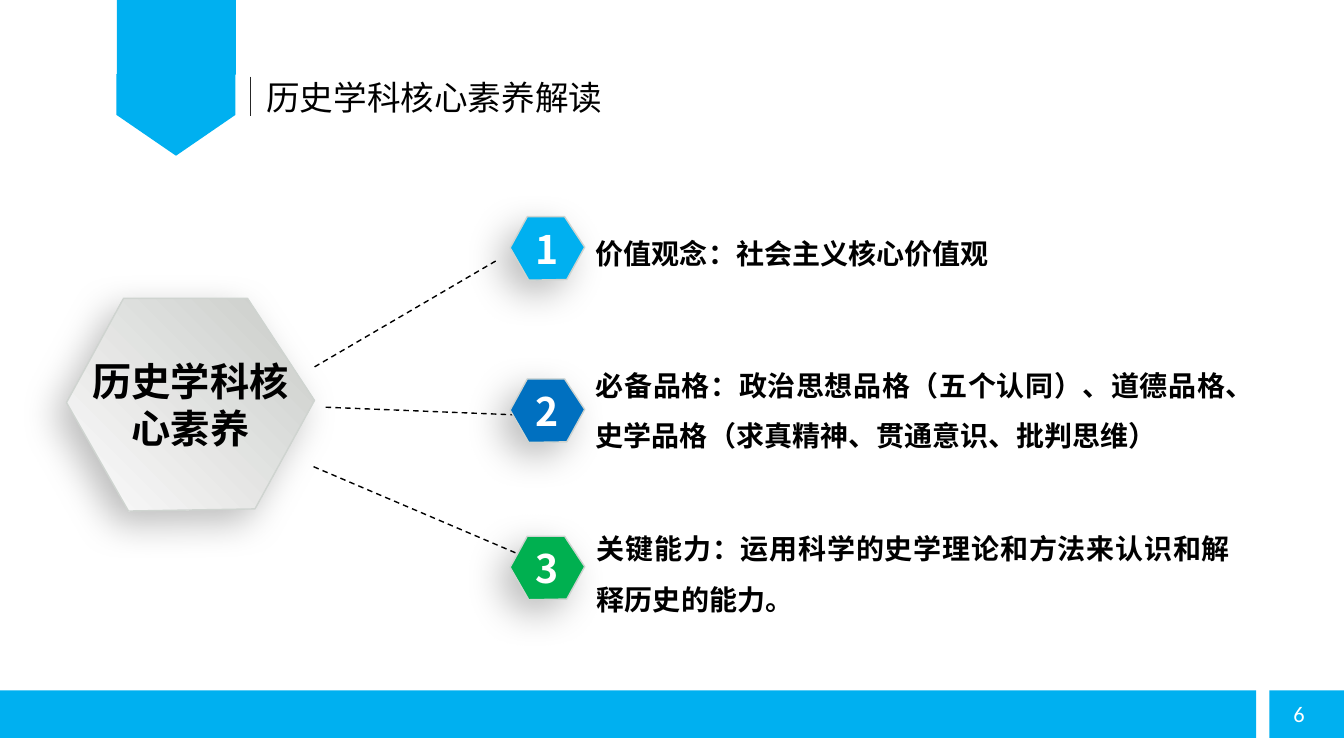
from dataclasses import dataclass

from lxml.etree import SubElement
from pptx import Presentation
from pptx.dml.color import RGBColor
from pptx.enum.dml import MSO_LINE
from pptx.enum.shapes import MSO_CONNECTOR, MSO_SHAPE
from pptx.enum.text import MSO_ANCHOR, PP_ALIGN
from pptx.oxml.ns import qn
from pptx.util import Inches, Pt


@dataclass(frozen=True)
class Theme:
    font: str = "Noto Sans CJK SC"
    number_font: str = "Calibri"
    accent: str = "00B0F0"
    blue: str = "0070C0"
    green: str = "00B050"
    text: str = "000000"
    white: str = "FFFFFF"
    rule: str = "262626"
    outline: str = "CFD4D0"
    gray_dark: str = "C9CBC8"
    gray_light: str = "FCFCFC"
    title_size: int = 24
    hexagon_size: int = 28
    body_size: int = 20
    number_size: int = 16


THEME = Theme()
# Corners of the slightly tilted hexagon, as shares of its box
HEXAGON = [(0.73, 0), (1, 0.48), (0.76, 0.99), (0.25, 1), (0, 0.49), (0.23, 0)]


def color(value):
    return RGBColor.from_string(value)


def write(shape, text, size, fill, bold=False, align=PP_ALIGN.LEFT,
          anchor=MSO_ANCHOR.TOP, spacing=None, font=THEME.font):
    frame = shape.text_frame
    frame.vertical_anchor = anchor
    paragraph = frame.paragraphs[0]
    paragraph.alignment = align
    paragraph.line_spacing = spacing
    run = paragraph.add_run()
    run.text = text
    run.font.size = Pt(size)
    run.font.bold = bold
    run.font.name = font
    run.font.color.rgb = color(fill)
    SubElement(run.font._element, qn("a:ea")).set("typeface", font)


def add_text_box(slide, box, margin=None):
    shape = slide.shapes.add_textbox(*map(Inches, box))
    frame = shape.text_frame
    frame.word_wrap = True
    if margin is not None:
        frame.margin_left = frame.margin_right = Inches(margin)
        frame.margin_top = frame.margin_bottom = Inches(margin)
    return shape


def add_block(slide, kind, box):
    shape = slide.shapes.add_shape(kind, *map(Inches, box))
    shape.shadow.inherit = False
    shape.fill.solid()
    shape.fill.fore_color.rgb = color(THEME.accent)
    shape.line.fill.background()
    return shape


def add_line(slide, start, end, stroke, width, dash=None):
    line = slide.shapes.add_connector(
        MSO_CONNECTOR.STRAIGHT, *map(Inches, start + end))
    line.line.color.rgb = color(stroke)
    line.line.width = Pt(width)
    line.line.dash_style = dash
    SubElement(line._element.spPr, qn("a:effectLst"))


def add_soft_shadow(shape):
    shape.shadow.inherit = False
    effects = shape._element.spPr.find(qn("a:effectLst"))
    shadow = SubElement(effects, qn("a:outerShdw"), blurRad=str(Pt(27)),
                        dist=str(Pt(12)), dir=str(135 * 60000),
                        algn="tr", rotWithShape="0")
    tint = SubElement(shadow, qn("a:srgbClr"), val="000000")
    SubElement(tint, qn("a:alpha"), val="26000")


def add_hexagon(slide, box, text, text_color, fill=None):
    left, top, width, height = box
    corners = [(Inches(left + x * width), Inches(top + y * height))
               for x, y in HEXAGON]
    builder = slide.shapes.build_freeform(*corners[0])
    builder.add_line_segments(corners[1:], close=True)
    shape = builder.convert_to_shape()
    if fill:
        shape.fill.solid()
        shape.fill.fore_color.rgb = color(fill)
    else:
        shape.fill.gradient()
        shape.fill.gradient_angle = 225
        for stop, shade in zip(shape.fill.gradient_stops,
                               (THEME.gray_dark, THEME.gray_light)):
            stop.color.rgb = color(shade)
    shape.line.color.rgb = color(THEME.outline)
    shape.line.width = Pt(1)
    add_soft_shadow(shape)
    shape.text_frame.word_wrap = True
    write(shape, text, THEME.hexagon_size, text_color, True,
          PP_ALIGN.CENTER, MSO_ANCHOR.MIDDLE)


def add_header(slide, box, text):
    left, top, width, height = box
    # Ribbon: a strip ending in a pentagon turned downwards
    add_block(slide, MSO_SHAPE.RECTANGLE, (left, top, 1.18, 0.74))
    point = add_block(slide, MSO_SHAPE.PENTAGON,
                      (left + 0.18, top + 0.55, 0.81, 1.18))
    point.rotation = 90
    add_line(slide, (left + 1.32, top + 0.76), (left + 1.32, top + 1.15),
             THEME.rule, 0.75)
    # Title
    title = slide.shapes.title
    title.left, title.top = Inches(left + 1.38), Inches(top + 0.71)
    title.width, title.height = Inches(width - 1.38), Inches(height - 0.71)
    write(title, text, THEME.title_size, THEME.text)


def add_footer(slide, box, number):
    left, top, width, height = box
    number_width, gap = 0.74, 0.13
    bar_width = width - number_width - gap
    add_block(slide, MSO_SHAPE.RECTANGLE, (left, top, bar_width, height))
    number_left = left + bar_width + gap
    add_block(slide, MSO_SHAPE.RECTANGLE,
              (number_left, top, number_width, height))
    label = add_text_box(slide, (number_left + 0.14, top + 0.05, 0.46, 0.37))
    label.text_frame.word_wrap = False
    write(label, number, THEME.number_size, THEME.white,
          font=THEME.number_font)


def add_diagram(slide, box, center, branches):
    left, top, width, height = box
    # Central idea
    add_hexagon(slide, (left, top + 0.81, 2.46, 2.11), center, THEME.text)
    # Branches: dashed line, numbered hexagon, explanation
    for number, branch in enumerate(branches, start=1):
        offset, fill, start, end, text_box, text = branch
        add_line(slide, start, end, THEME.text, 1, MSO_LINE.DASH)
        add_hexagon(slide, (left + 4.4, top + offset, 0.74, 0.63),
                    str(number), THEME.white, fill)
        explanation = add_text_box(slide, text_box, margin=0)
        write(explanation, text, THEME.body_size, THEME.text, True,
              PP_ALIGN.JUSTIFY, spacing=1.5)


def main():
    presentation = Presentation()
    presentation.slide_width = Inches(13.33)
    presentation.slide_height = Inches(7.5)
    slide = presentation.slides.add_slide(presentation.slide_layouts[5])

    add_header(slide, (1.16, 0, 5.14, 1.21), "历史学科核心素养解读")
    add_footer(slide, (0, 6.85, 13.33, 0.47), "6")
    add_diagram(slide, (0.66, 2.15, 11.78, 4.04), "历史学科核心素养", [
        (0, THEME.accent, (3.12, 3.64), (4.95, 2.57),
         (5.91, 2.18, 6.28, 0.56), "价值观念：社会主义核心价值观"),
        (1.61, THEME.blue, (3.23, 4.04), (5.21, 4.12),
         (5.91, 3.49, 6.53, 1.14),
         "必备品格：政治思想品格（五个认同）、道德品格、"
         "史学品格（求真精神、贯通意识、批判思维）"),
        (3.17, THEME.green, (3.11, 4.63), (5.15, 5.5),
         (5.92, 5.11, 6.28, 1.08),
         "关键能力：运用科学的史学理论和方法来认识和解释历史的能力。"),
    ])
    presentation.save("out.pptx")


if __name__ == "__main__":
    main()
